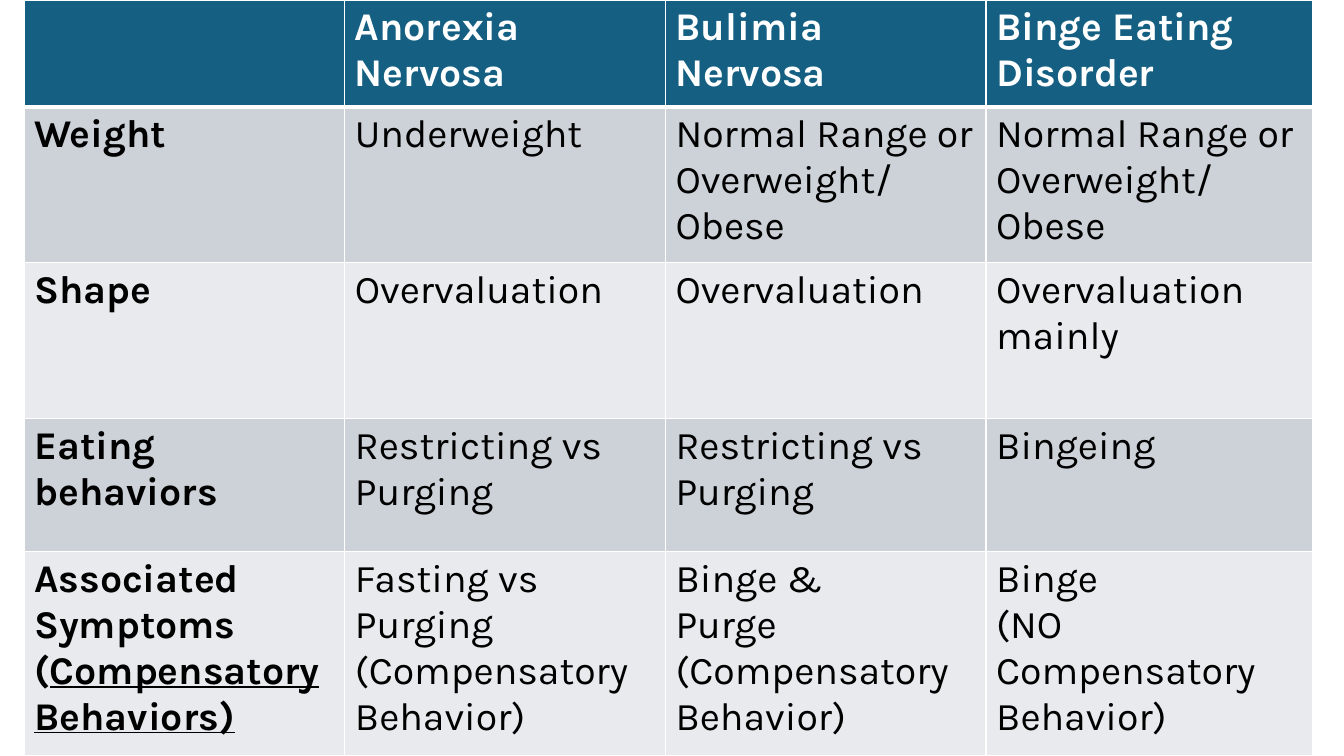
from dataclasses import dataclass

import lxml.etree
import pptx
import pptx.dml.color
import pptx.oxml.ns
import pptx.util


@dataclass(frozen=True)
class Theme:
    font: str = "Karla"
    size: int = 28
    header: str = "156082"
    bands: tuple = ("CCD2D8", "E8EAED")
    light: str = "FFFFFF"
    dark: str = "000000"
    rule: int = 1
    header_rule: int = 3


THEME = Theme()
SLIDE_W, SLIDE_H = 13.33, 7.5
COLUMNS = (3.18, 3.18, 3.18, 3.24)
ROWS = (1.06, 1.55, 1.55, 1.32, 2.03)
UNDERLINED = "Compensatory Behaviors)"
DISORDERS = [
    ["", "Anorexia\nNervosa", "Bulimia Nervosa", "Binge Eating\nDisorder"],
    ["Weight", "Underweight", "Normal Range or Overweight/ Obese",
     "Normal Range or Overweight/\nObese"],
    ["Shape", "Overvaluation", "Overvaluation", "Overvaluation mainly"],
    ["Eating behaviors", "Restricting vs\nPurging",
     "Restricting vs Purging", "Bingeing"],
    ["Associated Symptoms\n(" + UNDERLINED,
     "Fasting vs\nPurging\n(Compensatory Behavior)",
     "Binge &\nPurge (Compensatory Behavior)",
     "Binge\n(NO Compensatory\nBehavior)"],
]


def rgb(color):
    return pptx.dml.color.RGBColor.from_string(color)


def set_borders(cell, top, bottom):
    """Draw all four edges; top and bottom are widths in points."""
    qn = pptx.oxml.ns.qn
    tc_pr = cell._tc.get_or_add_tcPr()
    edges = (("L", THEME.rule), ("R", THEME.rule), ("T", top), ("B", bottom))
    for i, (side, width) in enumerate(edges):
        ln = lxml.etree.Element(qn(f"a:ln{side}"), w=str(pptx.util.Pt(width)))
        fill = lxml.etree.SubElement(ln, qn("a:solidFill"))
        lxml.etree.SubElement(fill, qn("a:srgbClr"), val=THEME.light)
        tc_pr.insert(i, ln)


def write_cell(cell, text, color, bold):
    tf = cell.text_frame
    tf.text = text
    for p in tf.paragraphs:
        if p.text.endswith(UNDERLINED):
            p.text = p.text.removesuffix(UNDERLINED)
            r = p.add_run()
            r.text = UNDERLINED
            r.font.underline = True
        for r in p.runs:
            r.font.name = THEME.font
            r.font.size = pptx.util.Pt(THEME.size)
            r.font.bold = bold
            r.font.color.rgb = rgb(color)


def add_comparison_table(slide, left, top, width, height):
    """Share the box among columns and rows in proportion to their weights."""
    box = [pptx.util.Inches(v) for v in (left, top, width, height)]
    table = slide.shapes.add_table(len(ROWS), len(COLUMNS), *box).table
    for column, share in zip(table.columns, COLUMNS):
        column.width = int(box[2] * share / sum(COLUMNS))
    for row, share in zip(table.rows, ROWS):
        row.height = int(box[3] * share / sum(ROWS))
    for i, texts in enumerate(DISORDERS):
        is_header = i == 0
        fill = THEME.header if is_header else THEME.bands[(i - 1) % 2]
        color = THEME.light if is_header else THEME.dark
        for j, text in enumerate(texts):
            cell = table.cell(i, j)
            cell.fill.solid()
            cell.fill.fore_color.rgb = rgb(fill)
            set_borders(cell,
                        THEME.header_rule if i == 1 else THEME.rule,
                        THEME.header_rule if is_header else THEME.rule)
            write_cell(cell, text, color, bold=is_header or j == 0)


def main():
    prs = pptx.Presentation()
    prs.slide_width = pptx.util.Inches(SLIDE_W)
    prs.slide_height = pptx.util.Inches(SLIDE_H)
    slide = prs.slides.add_slide(prs.slide_layouts.get_by_name("Blank"))
    add_comparison_table(slide, 0.24, 0, sum(COLUMNS), SLIDE_H)
    prs.save("out.pptx")


if __name__ == "__main__":
    main()
